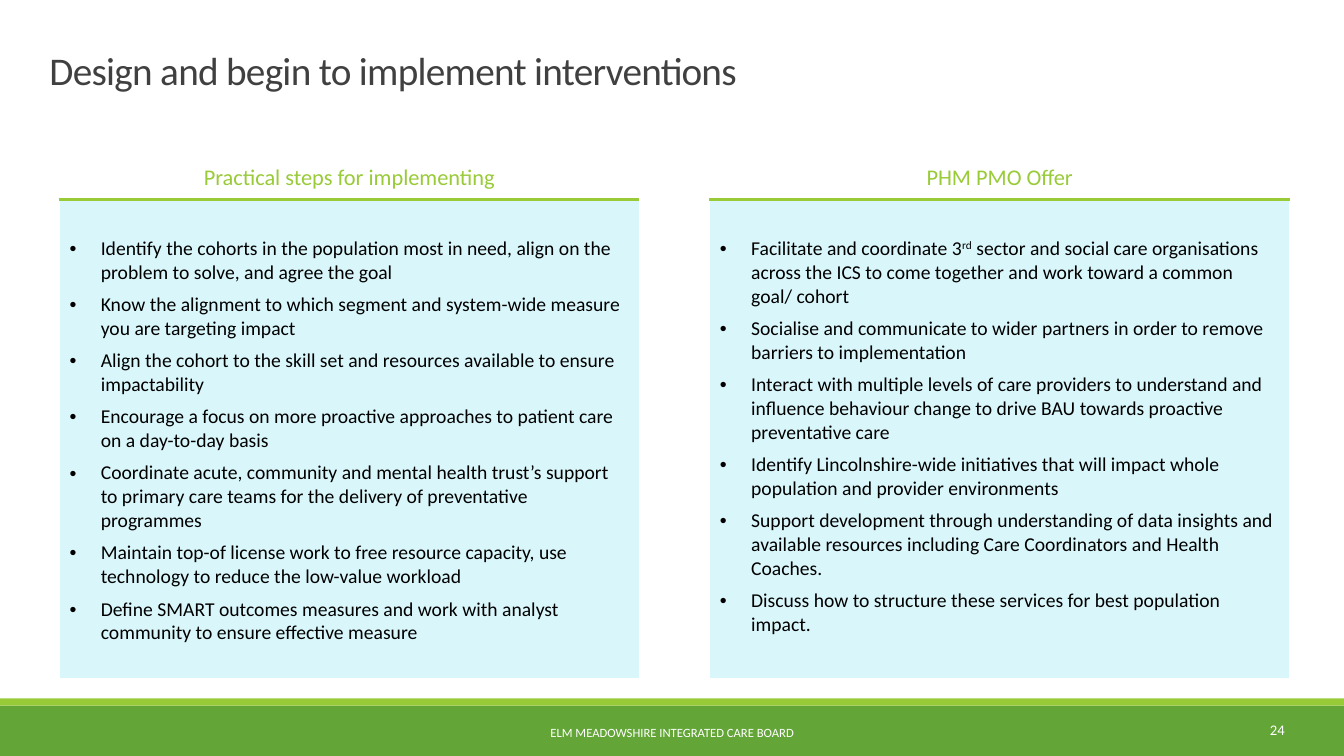
from lxml import etree
from pptx import Presentation
from pptx.dml.color import RGBColor
from pptx.enum.shapes import MSO_SHAPE as Shape
from pptx.enum.text import MSO_ANCHOR as Anchor, PP_ALIGN as Align
from pptx.oxml.ns import qn
from pptx.util import Inches, Pt

COLORS = {"green": "63A537", "lime": "99CB38", "panel": "D9F6FA",
          "title": "404040", "black": "000000", "white": "FFFFFF"}

STEPS = [
    "Identify the cohorts in the population most in need, align on the problem to solve, and agree the goal",
    "Know the alignment to which segment and system-wide measure you are targeting impact",
    "Align the cohort to the skill set and resources available to ensure impactability",
    "Encourage a focus on more proactive approaches to patient care on a day-to-day basis",
    "Coordinate acute, community and mental health trust’s support to primary care teams "
    "for the delivery of preventative programmes",
    "Maintain top-of license work to free resource capacity, use technology to reduce the low-value workload",
    "Define SMART outcomes measures and work with analyst community to ensure effective measure",
]
# A tuple holds plain text, superscript, plain text
OFFER = [
    ("Facilitate and coordinate 3", "rd", " sector and social care organisations across the ICS "
     "to come together and work toward a common goal/ cohort"),
    "Socialise and communicate to wider partners in order to remove barriers to implementation",
    "Interact with multiple levels of care providers to understand and influence behaviour change "
    "to drive BAU towards proactive preventative care",
    "Identify Lincolnshire-wide initiatives that will impact whole population and provider environments",
    "Support development through understanding of data insights and available resources "
    "including Care Coordinators and Health Coaches.",
    "Discuss how to structure these services for best population impact.",
]


def rgb(name):
    return RGBColor.from_string(COLORS[name])


class SlideBuilder:
    font = "Calibri"

    def __init__(self, slide):
        self.slide = slide

    def style(self, run, size, color):
        run.font.name = self.font
        run.font.size = Pt(size)
        run.font.color.rgb = rgb(color)

    def band(self, top, height, color):
        band = self.slide.shapes.add_shape(
            Shape.RECTANGLE, 0, Inches(top), Inches(13.33), Inches(height))
        band.shadow.inherit = False
        band.fill.solid()
        band.fill.fore_color.rgb = rgb(color)
        band.line.fill.background()

    def text(self, words, box, size, color, align=Align.LEFT):
        frame = self.slide.shapes.add_textbox(*map(Inches, box)).text_frame
        frame.word_wrap = True
        frame.vertical_anchor = Anchor.MIDDLE
        frame.text = words
        paragraph = frame.paragraphs[0]
        paragraph.alignment = align
        self.style(paragraph.runs[0], size, color)
        return frame

    def title(self, words, box):
        frame = self.text(words, box, 28, "title")
        frame.margin_left = frame.margin_right = frame.margin_top = frame.margin_bottom = 0
        paragraph = frame.paragraphs[0]
        paragraph.line_spacing = 0.85
        paragraph.runs[0].font._element.set("spc", "-50")

    def table(self, box, widths, heights):
        table = self.slide.shapes.add_table(
            len(heights), len(widths), *map(Inches, box)).table
        table.first_row = table.horz_banding = False
        for column, width in zip(table.columns, widths):
            column.width = Inches(width)
        for row, height in zip(table.rows, heights):
            row.height = Inches(height)
        return table

    def borders(self, cell, **special):
        properties = cell._tc.get_or_add_tcPr()
        for side in "LRTB":
            color, points = special.get(side, ("white", 1))
            line = etree.SubElement(properties, qn(f"a:ln{side}"), w=str(Pt(points)))
            fill = etree.SubElement(line, qn("a:solidFill"))
            etree.SubElement(fill, qn("a:srgbClr"), val=COLORS[color])

    def heading(self, cell, words):
        cell.margin_top = Inches(0.06)
        cell.text = words
        paragraph = cell.text_frame.paragraphs[0]
        paragraph.alignment = Align.CENTER
        self.style(paragraph.runs[0], 16, "lime")

    def bullets(self, cell, items):
        cell.margin_top = Inches(0.37)
        cell.margin_right = Inches(0.12)
        frame = cell.text_frame
        for index, item in enumerate(items):
            paragraph = frame.paragraphs[0] if index == 0 else frame.add_paragraph()
            paragraph.space_before = paragraph.space_after = Pt(3)
            properties = paragraph._p.get_or_add_pPr()
            properties.set("marL", str(Inches(0.31)))
            properties.set("indent", str(-Inches(0.31)))
            etree.SubElement(properties, qn("a:buFont"), typeface="Arial")
            etree.SubElement(properties, qn("a:buChar"), char="•")
            for part, words in enumerate([item] if isinstance(item, str) else item):
                run = paragraph.add_run()
                run.text = words
                self.style(run, 14, "black")
                if part == 1:
                    run.font._element.set("baseline", "30000")


def main():
    deck = Presentation()
    deck.slide_width, deck.slide_height = Inches(13.33), Inches(7.5)
    page = SlideBuilder(deck.slides.add_slide(deck.slide_layouts[6]))

    # Footer bands and title
    page.band(7, 0.5, "green")
    page.band(6.93, 0.07, "lime")
    page.title("Design and begin to implement interventions", (0.49, 0, 12.35, 1.45))

    # Two panels with an empty gap column between them
    panels = page.table((0.59, 1.57, 12.2, 5.16), (5.75, 0.7, 5.75), (0.41, 4.75))
    contents = {0: ("Practical steps for implementing", STEPS), 2: ("PHM PMO Offer", OFFER)}
    for column in range(3):
        head, body = panels.cell(0, column), panels.cell(1, column)
        rule = ("lime" if column in contents else "white", 3)
        page.borders(head, B=rule)
        page.borders(body, T=rule)
        head.fill.background()
        body.fill.background()
        if column in contents:
            heading, items = contents[column]
            page.heading(head, heading)
            page.bullets(body, items)
            body.fill.solid()
            body.fill.fore_color.rgb = rgb("panel")

    # Footer text
    page.text("24", (11.42, 7.04, 1.42, 0.4), 10.5, "white", Align.RIGHT)
    page.text("ELM MEADOWSHIRE INTEGRATED CARE BOARD", (4.03, 7.07, 5.27, 0.4),
              9, "white", Align.CENTER)

    deck.save("out.pptx")


if __name__ == "__main__":
    main()
